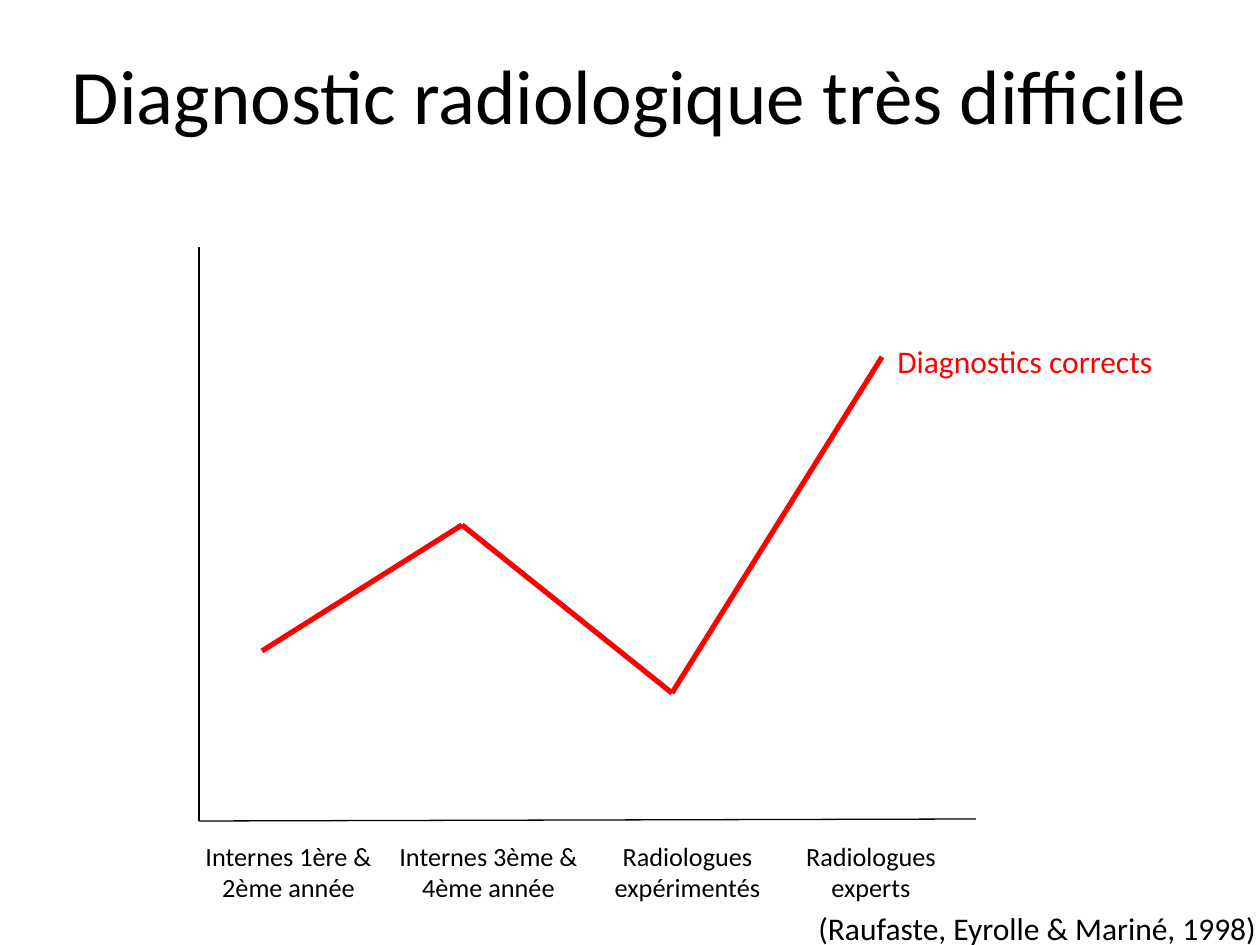
from itertools import pairwise

from lxml import etree
from pptx import Presentation
from pptx.dml.color import RGBColor
from pptx.enum.shapes import MSO_CONNECTOR
from pptx.enum.text import MSO_ANCHOR, PP_ALIGN
from pptx.oxml.ns import qn
from pptx.util import Emu, Pt

PX_PER_INCH = 126
STRAIGHT = MSO_CONNECTOR.STRAIGHT
LEFT, CENTER = PP_ALIGN.LEFT, PP_ALIGN.CENTER
TOP, MIDDLE = MSO_ANCHOR.TOP, MSO_ANCHOR.MIDDLE
BLACK, RED = "000000", "FF0000"

ORIGIN = (199, 821)
AXIS_ENDS = [(976, 819), (199, 247)]
CORRECT_DIAGNOSES = [(262, 651), (462, 525), (672, 693), (882, 357)]
LABEL_TOP, LABEL_HEIGHT = 840, 63
# left, width, lines, wrap
GROUPS = [
    (199, 179, ["Internes 1ère & 2ème année"], True),
    (399, 179, ["Internes 3ème & 4ème année"], True),
    (612, 151, ["Radiologues", "expérimentés"], False),
    (801, 140, ["Radiologues", "experts"], False),
]


def px(length):
    return Emu(round(length * 914400 / PX_PER_INCH))


def color(hex_string):
    return RGBColor.from_string(hex_string)


def add_text(slide, box, lines, size, ink=BLACK, align=LEFT, anchor=TOP,
             wrap=False, inset=True):
    frame = slide.shapes.add_textbox(*map(px, box)).text_frame
    frame.word_wrap = wrap
    frame.vertical_anchor = anchor
    if not inset:
        frame.margin_left = frame.margin_right = 0
        frame.margin_top = frame.margin_bottom = 0
    frame.text = "\n".join(lines)
    for paragraph in frame.paragraphs:
        paragraph.alignment = align
        paragraph.font.name = "Calibri"
        paragraph.font.size = Pt(size)
        paragraph.font.color.rgb = color(ink)


def add_line(slide, start, end, ink, width):
    connector = slide.shapes.add_connector(STRAIGHT, *map(px, start + end))
    connector.line.color.rgb = color(ink)
    connector.line.width = Pt(width)
    etree.SubElement(connector._element.spPr, qn("a:effectLst"))


def main():
    deck = Presentation()
    deck.slide_width, deck.slide_height = px(1260), px(945)
    slide = deck.slides.add_slide(deck.slide_layouts[6])

    add_text(slide, (21, 15, 1218, 158), ["Diagnostic radiologique très difficile"],
             44, align=CENTER, anchor=MIDDLE, wrap=True)

    for axis_end in AXIS_ENDS:
        add_line(slide, ORIGIN, axis_end, BLACK, 0.75)
    for left, width, lines, wrap in GROUPS:
        add_text(slide, (left, LABEL_TOP, width, LABEL_HEIGHT), lines, 15,
                 align=CENTER, wrap=wrap, inset=False)

    for start, end in pairwise(CORRECT_DIAGNOSES):
        add_line(slide, start, end, RED, 3)
    add_text(slide, (885, 336, 301, 52), ["Diagnostics corrects"], 18, RED)

    add_text(slide, (806, 903, 469, 50), ["(Raufaste, Eyrolle & Mariné, 1998)"], 18)

    deck.save("out.pptx")


if __name__ == "__main__":
    main()
